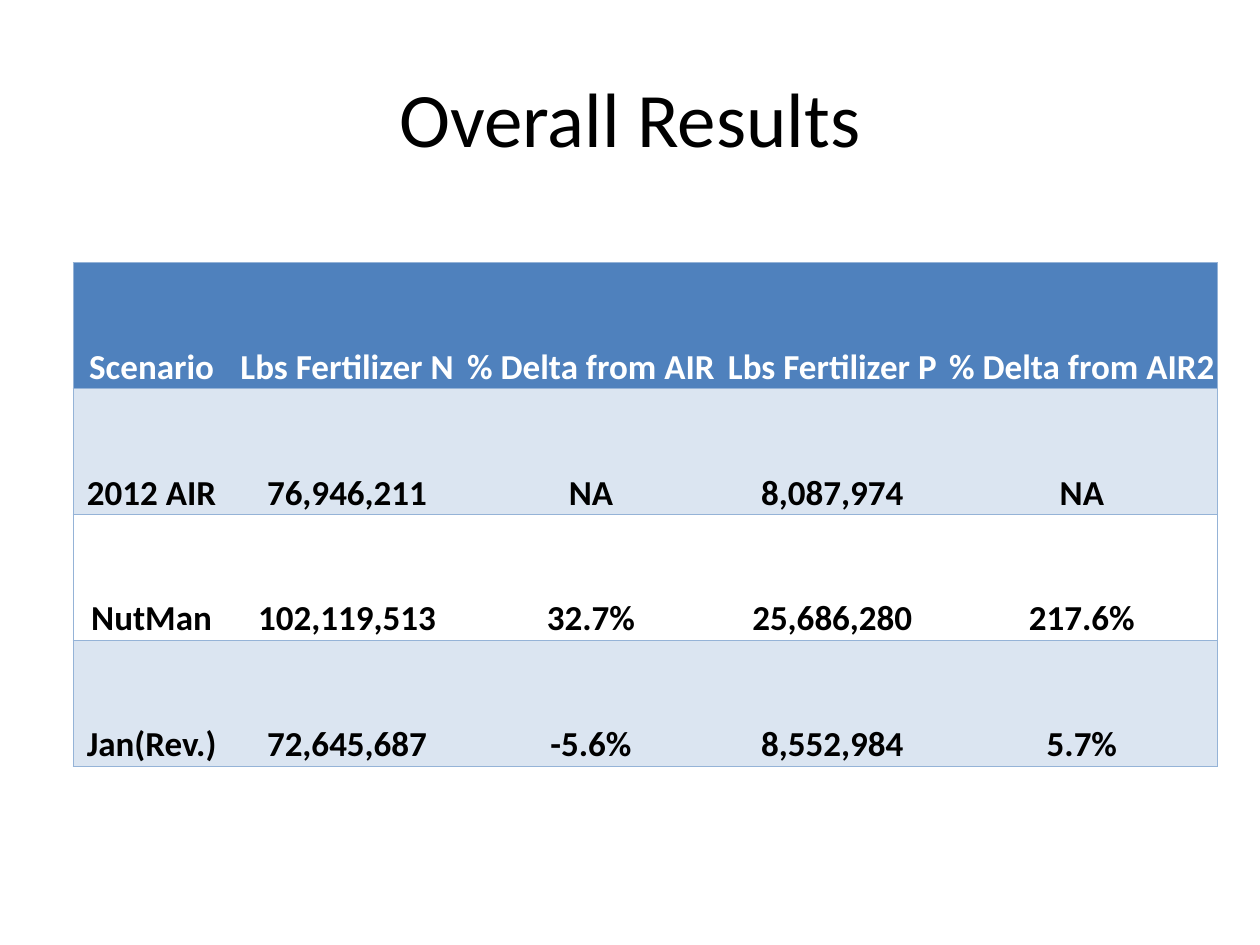
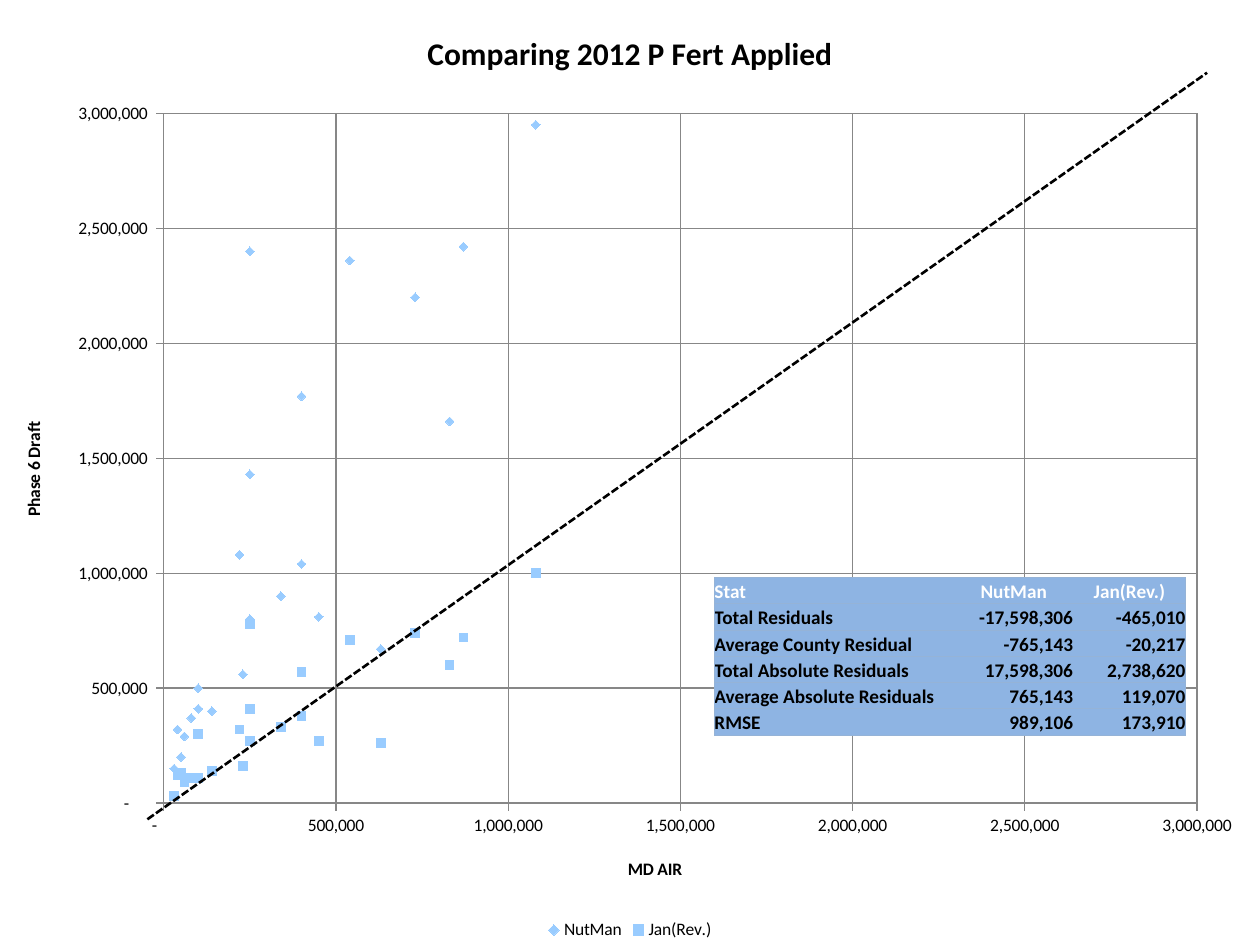
from dataclasses import dataclass

from lxml.etree import SubElement
from pptx import Presentation
from pptx.chart.data import XyChartData
from pptx.dml.color import RGBColor
from pptx.enum.chart import XL_CHART_TYPE, XL_LEGEND_POSITION, XL_MARKER_STYLE, XL_TICK_MARK
from pptx.enum.dml import MSO_LINE
from pptx.enum.shapes import MSO_CONNECTOR
from pptx.enum.text import MSO_ANCHOR, PP_ALIGN
from pptx.oxml import parse_xml
from pptx.oxml.ns import nsdecls, qn
from pptx.util import Inches, Pt


@dataclass(frozen=True)
class Theme:
    font: str = "Calibri"
    text: str = "000000"
    inverse: str = "FFFFFF"
    header: str = "4F81BD"
    band: str = "DBE5F1"
    stats: str = "8EB4E3"
    border: str = "95B3D7"
    grid: str = "878787"
    marker: str = "99CCFF"
    title_size: int = 44
    table_size: int = 20
    chart_title_size: int = 18
    stats_size: int = 11
    chart_size: int = 10


THEME = Theme()
WIDTH, HEIGHT = Inches(10), Inches(7.5)
NO_STYLE = "{2D5ABB26-0587-4C30-8999-92F81FD0307C}"
NUMBER_FORMAT = '_(* #,##0_);_(* \\(#,##0\\);_(* "-"??_);_(@_)'
AXIS_MAX = 3000000

RESULTS = [
    ["Scenario", "Lbs Fertilizer N", "% Delta from AIR", "Lbs Fertilizer P", "% Delta from AIR2"],
    ["2012 AIR", "76,946,211", "NA", "8,087,974", "NA"],
    ["NutMan", "102,119,513", "32.7%", "25,686,280", "217.6%"],
    ["Jan(Rev.)", "72,645,687", "-5.6%", "8,552,984", "5.7%"],
]
STATS = [
    ["Stat", "NutMan", "Jan(Rev.)"],
    ["Total Residuals", "-17,598,306", "-465,010"],
    ["Average County Residual", "-765,143", "-20,217"],
    ["Total Absolute Residuals", "17,598,306", "2,738,620"],
    ["Average Absolute Residuals", "765,143", "119,070"],
    ["RMSE", "989,106", "173,910"],
]
AIR_THOUSANDS = [30, 60, 340, 80, 250, 830, 400, 140, 400, 730, 230, 630,
                 100, 870, 450, 50, 1080, 250, 40, 540, 250, 100, 220]
DRAFT_THOUSANDS = {
    "NutMan": [150, 290, 900, 370, 2400, 1660, 1040, 400, 1770, 2200, 560, 670,
               410, 2420, 810, 200, 2950, 800, 320, 2360, 1430, 500, 1080],
    "Jan(Rev.)": [30, 90, 330, 110, 780, 600, 380, 140, 570, 740, 160, 260,
                  110, 720, 270, 130, 1000, 270, 120, 710, 410, 300, 320],
}
MARKERS = [XL_MARKER_STYLE.DIAMOND, XL_MARKER_STYLE.SQUARE]


def rgb(color):
    return RGBColor.from_string(color)


def place(x, y, w, h):
    return round(x * WIDTH), round(y * HEIGHT), round(w * WIDTH), round(h * HEIGHT)


def write(tf, text, size, color=THEME.text, bold=False, align=PP_ALIGN.CENTER):
    p = tf.paragraphs[0]
    p.alignment = align
    r = p.add_run()
    r.text = text
    r.font.name, r.font.size, r.font.bold = THEME.font, Pt(size), bold
    r.font.color.rgb = rgb(color)


def add_borders(cell, sides):
    tc_pr = cell._tc.get_or_add_tcPr()
    for side in sides:
        ln = SubElement(tc_pr, qn(f"a:ln{side}"), w=str(Pt(0.5)))
        fill = SubElement(ln, qn("a:solidFill"))
        SubElement(fill, qn("a:srgbClr"), val=THEME.border)


def add_grid(s, box, rows, shares, size, fills, aligns):
    left, top, width, height = place(*box)
    frame = s.shapes.add_table(len(rows), len(shares), left, top, width, height)
    frame._element.xpath(".//a:tableStyleId")[0].text = NO_STYLE
    table = frame.table
    table.horz_banding = False
    for column, share in zip(table.columns, shares):
        column.width = round(width * share / sum(shares))
    for i, row in enumerate(rows):
        table.rows[i].height = height // len(rows)
        for j, text in enumerate(row):
            cell = table.cell(i, j)
            cell.margin_left = cell.margin_right = cell.margin_top = cell.margin_bottom = 0
            cell.vertical_anchor = MSO_ANCHOR.BOTTOM
            first, last = j == 0, j == len(row) - 1
            add_borders(cell, "L" * first + "R" * last + "TB")
            if fills[i]:
                cell.fill.solid()
                cell.fill.fore_color.rgb = rgb(fills[i])
            else:
                cell.fill.background()
            align = PP_ALIGN.CENTER if i == 0 and j else aligns[j]
            write(cell.text_frame, text, size, THEME.text if i else THEME.inverse, True, align)


def format_axis(axis, title):
    axis.minimum_scale, axis.maximum_scale, axis.major_unit = 0, AXIS_MAX, 500000
    axis.has_major_gridlines = True
    axis.major_tick_mark = XL_TICK_MARK.OUTSIDE
    axis.minor_tick_mark = XL_TICK_MARK.NONE
    axis.tick_labels.number_format = NUMBER_FORMAT
    axis.tick_labels.number_format_is_linked = False
    for line in (axis.format.line, axis.major_gridlines.format.line):
        line.color.rgb = rgb(THEME.grid)
        line.width = Pt(0.75)
    write(axis.axis_title.text_frame, title, THEME.chart_size, bold=True)


def set_plot_box(chart, **shares):
    plot_area = chart._chartSpace.chart.plotArea
    for layout in plot_area.findall(qn("c:layout")):
        plot_area.remove(layout)
    parts = "".join(f'<c:{key} val="{value}"/>' for key, value in shares.items())
    plot_area.insert(0, parse_xml(
        f'<c:layout {nsdecls("c")}><c:manualLayout><c:layoutTarget val="inner"/>'
        f'<c:xMode val="edge"/><c:yMode val="edge"/>{parts}</c:manualLayout></c:layout>'))


def add_scatter(s, box):
    data = XyChartData()
    for name, drafts in DRAFT_THOUSANDS.items():
        series = data.add_series(name)
        for air, draft in zip(AIR_THOUSANDS, drafts):
            series.add_data_point(air * 1000, draft * 1000)
    chart = s.shapes.add_chart(XL_CHART_TYPE.XY_SCATTER, *place(*box), data).chart
    chart.font.name, chart.font.size = THEME.font, Pt(THEME.chart_size)
    chart.font.color.rgb = rgb(THEME.text)
    chart.has_title = True
    write(chart.chart_title.text_frame, "Comparing 2012 P Fert Applied",
          THEME.chart_title_size, bold=True)
    chart.has_legend = True
    chart.legend.position = XL_LEGEND_POSITION.BOTTOM
    chart.legend.include_in_layout = False
    format_axis(chart.category_axis, "MD AIR")
    format_axis(chart.value_axis, "Phase 6 Draft")
    chart.plots[0].vary_by_categories = False
    for series, style in zip(chart.plots[0].series, MARKERS):
        series.format.line.fill.background()
        series.marker.style, series.marker.size = style, 5
        series.marker.format.fill.solid()
        series.marker.format.fill.fore_color.rgb = rgb(THEME.marker)
        series.marker.format.line.fill.background()
    set_plot_box(chart, x=0.13, y=0.12, w=0.82, h=0.73)


def add_equality_line(s, box):
    left, top, width, height = place(*box)
    line = s.shapes.add_connector(MSO_CONNECTOR.STRAIGHT, left, top + height, left + width, top)
    line.line.color.rgb = rgb(THEME.text)
    line.line.width = Pt(1.5)
    line.line.dash_style = MSO_LINE.SQUARE_DOT
    SubElement(line._element.spPr, qn("a:effectLst"))


def results_slide(prs):
    s = prs.slides.add_slide(prs.slide_layouts[5])
    title = s.shapes.title
    title.left, title.top, title.width, title.height = place(0.05, 0.04, 0.9, 1 / 6)
    title.text_frame.vertical_anchor = MSO_ANCHOR.MIDDLE
    write(title.text_frame, "Overall Results", THEME.title_size)
    add_grid(s, (0.058, 0.278, 0.908, 0.533), RESULTS, [1.25, 1.86, 2.02, 1.82, 2.15],
             THEME.table_size, [THEME.header, THEME.band, None, THEME.band],
             [PP_ALIGN.CENTER] * len(RESULTS[0]))


def comparison_slide(prs):
    s = prs.slides.add_slide(prs.slide_layouts[6])
    add_scatter(s, (0, 0, 1, 1))
    add_equality_line(s, (0.117, 0.077, 0.841, 0.79))
    add_grid(s, (0.567, 0.611, 0.374, 0.167), STATS, [1.9, 0.94, 0.89],
             THEME.stats_size, [THEME.stats] * len(STATS),
             [PP_ALIGN.LEFT, PP_ALIGN.RIGHT, PP_ALIGN.RIGHT])


def main():
    prs = Presentation()
    prs.slide_width, prs.slide_height = WIDTH, HEIGHT
    results_slide(prs)
    comparison_slide(prs)
    prs.save("out.pptx")


if __name__ == "__main__":
    main()
